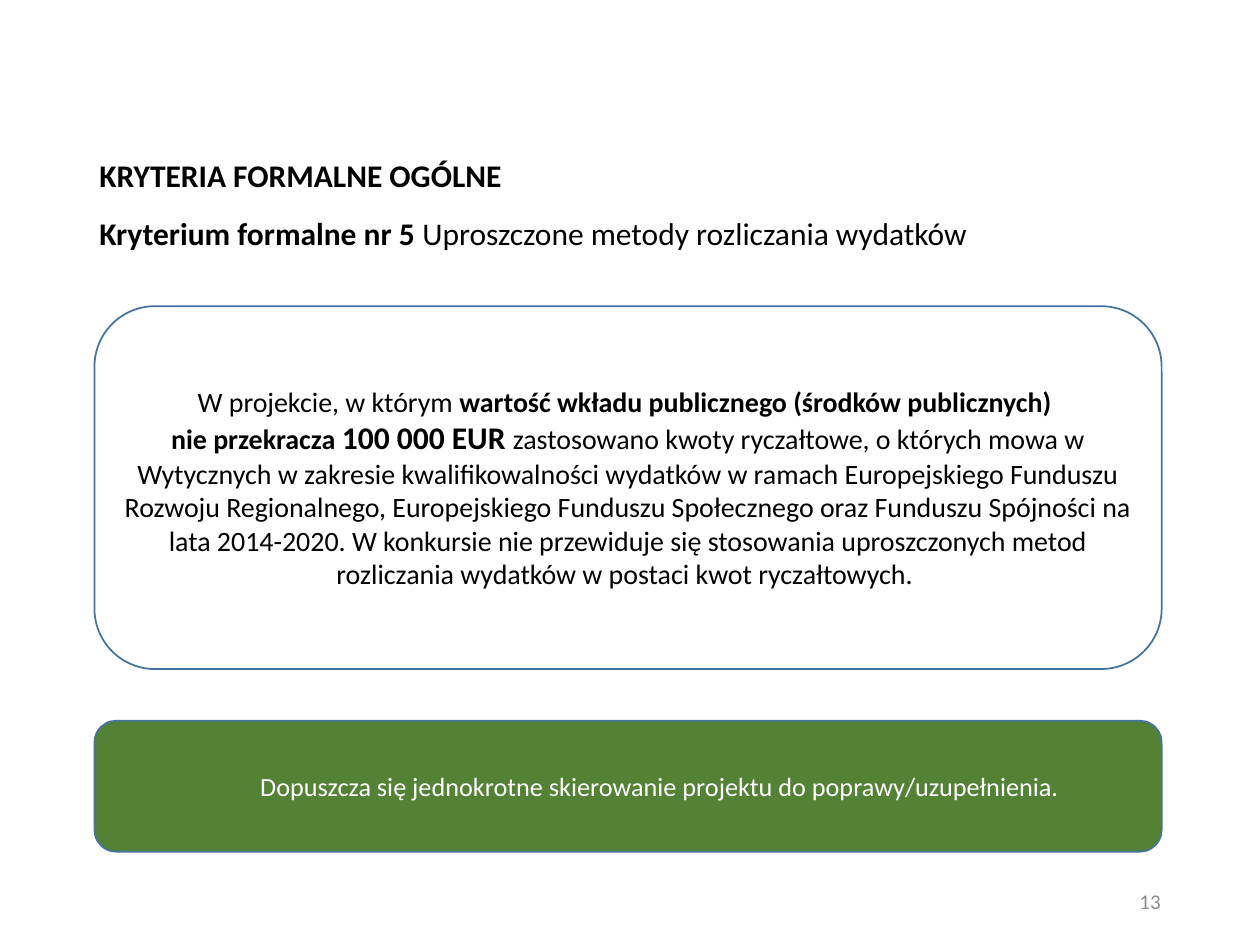
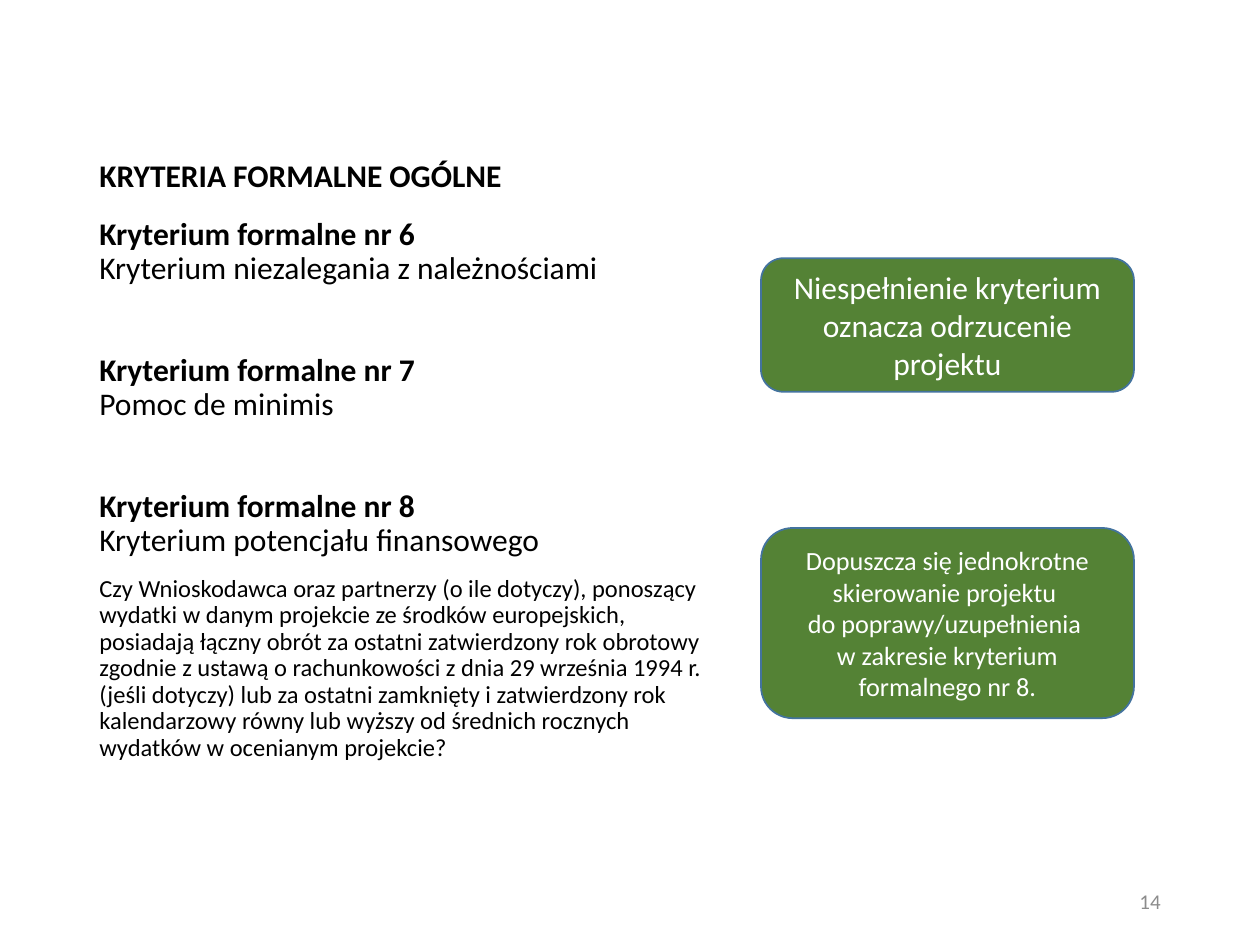
"""Build two slides on the general formal criteria of a funding call."""
from copy import deepcopy
from dataclasses import dataclass

from pptx import Presentation
from pptx.dml.color import RGBColor
from pptx.enum.shapes import MSO_SHAPE as Preset
from pptx.enum.text import MSO_ANCHOR as Anchor, PP_ALIGN as Align
from pptx.slide import Slide
from pptx.text.text import TextFrame
from pptx.util import Inches, Pt

COLOURS = {"ink": "000000", "paper": "FFFFFF", "green": "548235", "edge": "43739E", "number": "8C8C8C"}
HEADING = "KRYTERIA FORMALNE OGÓLNE"
MARGIN, CONTENT_WIDTH = 0.69, 8.62
CARD_LEFT, CARD_WIDTH = 0.75, 8.47
VERDICT_LEFT, VERDICT_WIDTH = 6.04, 2.96
CRITERION_GAP = 39


@dataclass(frozen=True)
class Span:
    text: str
    size: float = 18
    bold: bool = False
    colour: str = "ink"


@dataclass(frozen=True)
class Block:
    spans: tuple[Span, ...]
    before: float = 0
    spacing: float = 1.0
    align: Align = Align.LEFT
    indent: float = 0


@dataclass(frozen=True)
class Area:
    left: float
    top: float
    width: float
    height: float

    def lengths(self) -> list[int]:
        return [Inches(side) for side in (self.left, self.top, self.width, self.height)]


@dataclass(frozen=True)
class Card:
    area: Area
    block: Block
    fill: str = "green"


@dataclass(frozen=True)
class Page:
    number: int
    body: Area
    blocks: tuple[Block, ...]
    cards: tuple[Card, ...]


def rgb(name: str) -> RGBColor:
    return RGBColor.from_string(COLOURS[name])


def apply(target: object, values: dict[str, object]) -> None:
    for attribute, value in values.items():
        setattr(target, attribute, value)


def write(frame: TextFrame, blocks: tuple[Block, ...], anchor: Anchor) -> None:
    apply(frame, {"word_wrap": True, "vertical_anchor": anchor})
    for position, block in enumerate(blocks):
        paragraph = frame.add_paragraph() if position else frame.paragraphs[0]
        apply(paragraph, {"alignment": block.align, "line_spacing": block.spacing,
                          "space_before": Pt(block.before)})
        if block.indent:
            paragraph._p.get_or_add_pPr().set("marL", str(Inches(block.indent)))
        for span in block.spans:
            for line_index, line in enumerate(span.text.split("\n")):
                if line_index:
                    paragraph.add_line_break()
                    paragraph._p[-1].append(deepcopy(run._r.rPr))
                if not line:
                    continue
                run = paragraph.add_run()
                run.text = line
                apply(run.font, {"name": "Calibri", "size": Pt(span.size), "bold": span.bold})
                run.font.color.rgb = rgb(span.colour)


def add_text(slide: Slide, area: Area, blocks: tuple[Block, ...], anchor: Anchor = Anchor.MIDDLE) -> None:
    write(slide.shapes.add_textbox(*area.lengths()).text_frame, blocks, anchor)


def add_card(slide: Slide, card: Card) -> None:
    panel = slide.shapes.add_shape(Preset.ROUNDED_RECTANGLE, *card.area.lengths())
    panel.shadow.inherit = False
    panel.fill.solid()
    panel.fill.fore_color.rgb = rgb(card.fill)
    panel.line.color.rgb = rgb("edge")
    panel.line.width = Pt(1)
    write(panel.text_frame, (card.block,), Anchor.MIDDLE)


def add_page(slide: Slide, page: Page) -> None:
    heading = Block((Span(HEADING, bold=True),), spacing=0.9)
    number = Block((Span(str(page.number), 12, colour="number"),), align=Align.RIGHT)
    add_text(slide, Area(MARGIN, 1.05, CONTENT_WIDTH, 0.71), (heading,))
    add_text(slide, page.body, page.blocks, Anchor.TOP)
    add_text(slide, Area(7.06, 6.95, 2.25, 0.4), (number,))
    for card in page.cards:
        add_card(slide, card)


def criterion(number: int, name: str, separator: str = "\n", before: float = 0) -> Block:
    label = Span(f"Kryterium formalne nr {number}{separator}", bold=True)
    return Block((label, Span(name)), before, 0.9)


def verdict(text: str, size: float, indent: float = 0) -> Block:
    return Block((Span(text, size, colour="paper"),), align=Align.CENTER, indent=indent)


LUMP_SUM_RULE = Block((
    Span("W projekcie, w którym ", 16),
    Span("wartość wkładu publicznego (środków publicznych) \nnie przekracza ", 16, True),
    Span("100 000 EUR ", 18, True),
    Span("zastosowano kwoty ryczałtowe, o których mowa w Wytycznych w zakresie kwalifikowalności "
         "wydatków w ramach Europejskiego Funduszu Rozwoju Regionalnego, Europejskiego Funduszu "
         "Społecznego oraz Funduszu Spójności na lata 2014-2020. W konkursie nie przewiduje się "
         "stosowania uproszczonych metod rozliczania wydatków w postaci kwot ryczałtowych. ", 16),
), align=Align.CENTER)

TURNOVER_QUESTION = Block((
    Span("Czy Wnioskodawca oraz partnerzy (o ile dotyczy), ponoszący wydatki w danym projekcie ze "
         "środków europejskich, posiadają łączny obrót za ostatni zatwierdzony rok obrotowy zgodnie "
         "z ustawą o rachunkowości z dnia 29 września 1994 r. (jeśli dotyczy) lub za ostatni zamknięty "
         "i zatwierdzony rok kalendarzowy równy lub wyższy od średnich rocznych wydatków w ocenianym "
         "projekcie?", 14),
), before=10, spacing=0.9)

PAGES = (
    Page(
        13,
        Area(MARGIN, 1.68, CONTENT_WIDTH, 0.7),
        (criterion(5, "Uproszczone metody rozliczania wydatków", " "),),
        (
            Card(Area(CARD_LEFT, 2.43, CARD_WIDTH, 2.88), LUMP_SUM_RULE, "paper"),
            Card(Area(CARD_LEFT, 5.72, CARD_WIDTH, 1.04), verdict(
                "Dopuszcza się jednokrotne skierowanie projektu do poprawy/uzupełnienia.", 15, 0.5)),
        ),
    ),
    Page(
        14,
        Area(MARGIN, 1.68, 5.16, 4.79),
        (
            criterion(6, "Kryterium niezalegania z należnościami"),
            criterion(7, "Pomoc de minimis", before=CRITERION_GAP),
            criterion(8, "Kryterium potencjału finansowego", before=CRITERION_GAP),
            TURNOVER_QUESTION,
        ),
        (
            Card(Area(VERDICT_LEFT, 2.05, VERDICT_WIDTH, 1.06), verdict(
                "Niespełnienie kryterium oznacza odrzucenie projektu", 18)),
            Card(Area(VERDICT_LEFT, 4.19, VERDICT_WIDTH, 1.51), verdict(
                "Dopuszcza się jednokrotne skierowanie projektu \ndo poprawy/uzupełnienia \n"
                "w zakresie kryterium formalnego nr 8.", 15)),
        ),
    ),
)


def main() -> None:
    deck = Presentation()
    apply(deck, {"slide_width": Inches(10), "slide_height": Inches(7.5)})
    for page in PAGES:
        add_page(deck.slides.add_slide(deck.slide_layouts[6]), page)
    deck.save("out.pptx")


if __name__ == "__main__":
    main()
